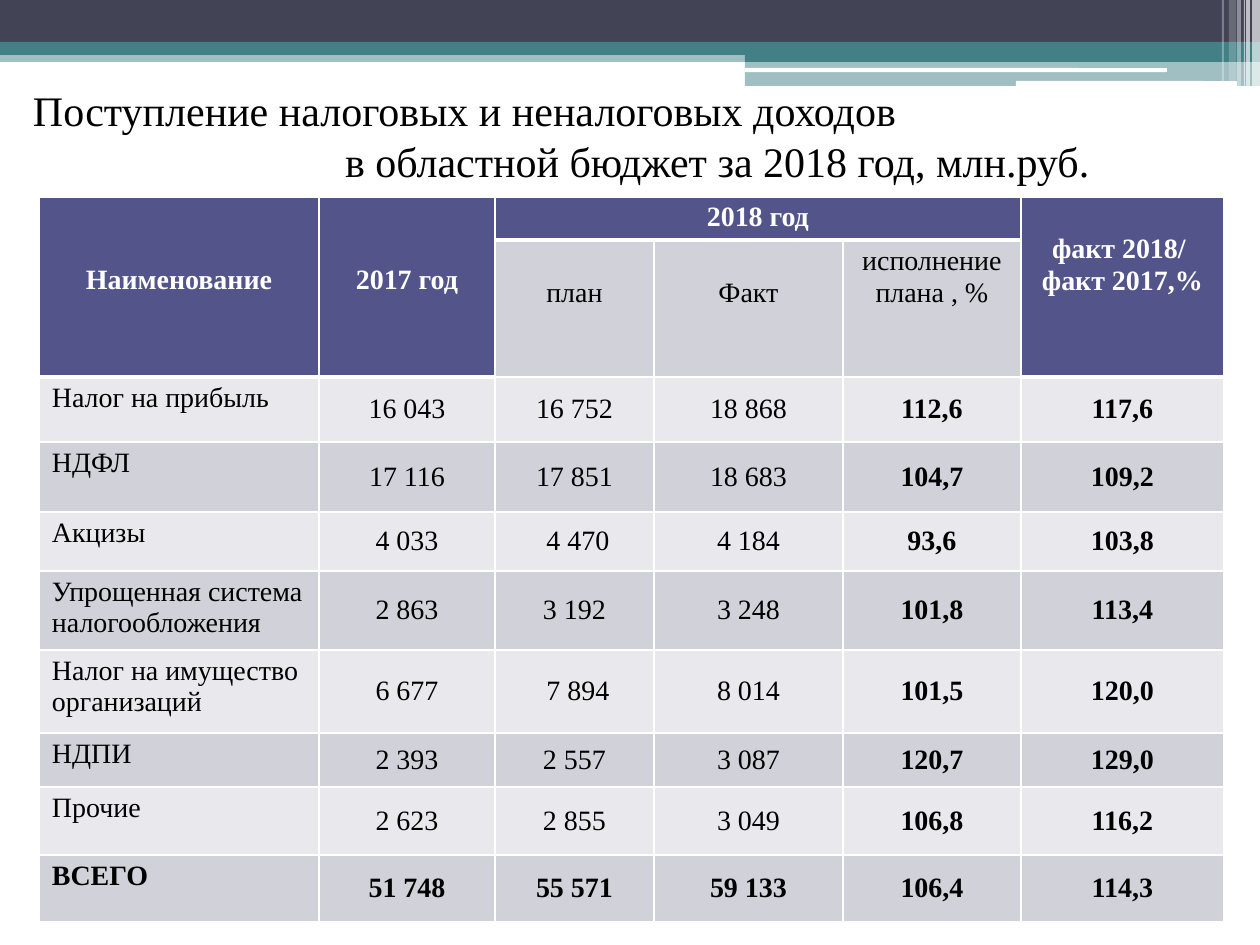
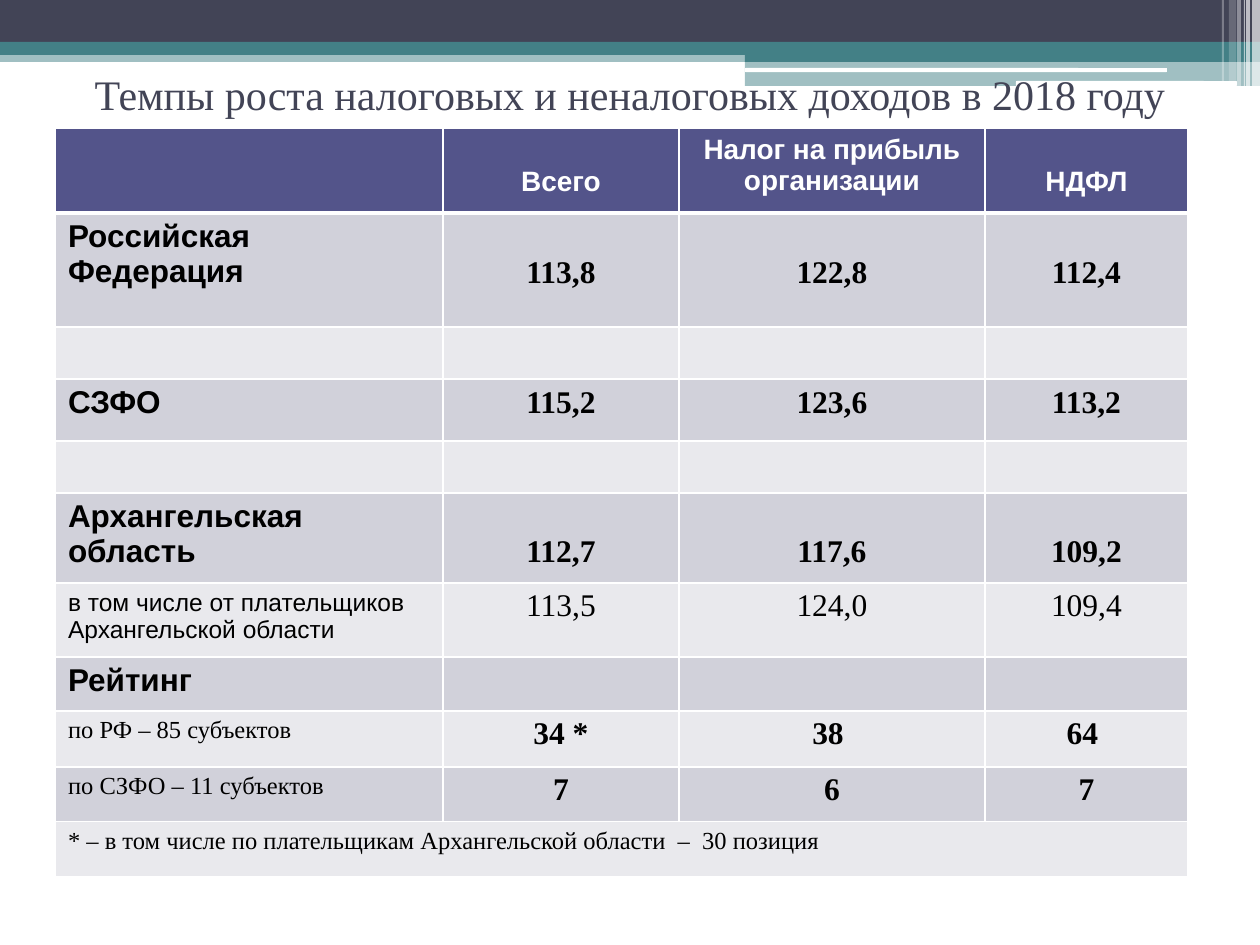
"""Build two slides on regional tax revenue for 2018."""
from dataclasses import dataclass

from lxml import etree
from pptx import Presentation
from pptx import util as u
from pptx.dml import color
from pptx.enum import shapes, text
from pptx.oxml import ns


@dataclass(frozen=True)
class Theme:
    dark: str = "424456"
    teal: str = "438086"
    head: str = "53548A"
    odd: str = "D1D1DA"
    even: str = "E9E9ED"
    white: str = "FFFFFF"
    black: str = "000000"
    serif: str = "Times New Roman"
    sans: str = "Arial"
    title: int = 24
    large: int = 18
    base: int = 16
    small: int = 14


T = Theme()
PX = 914400 / 126
RGB = color.RGBColor.from_string
MID, TOP = text.MSO_ANCHOR.MIDDLE, text.MSO_ANCHOR.TOP
LEFT, CENTER = text.PP_ALIGN.LEFT, text.PP_ALIGN.CENTER


def write(box, words, size=T.base, font=T.serif, ink=T.black, bold=False,
          align=CENTER, anchor=TOP, pads=(13, 6, 13, 6)):
    """Fill a cell or text frame, one paragraph per line of words."""
    frame = getattr(box, "text_frame", box)
    box.vertical_anchor = anchor
    sides = ("margin_left", "margin_top", "margin_right", "margin_bottom")
    for side, pad in zip(sides, pads):
        setattr(box, side, int(pad * PX))
    frame.word_wrap = True
    frame.text = words
    for para in frame.paragraphs:
        para.alignment = align
        for run in para.runs:
            run.font.size, run.font.name, run.font.bold = u.Pt(size), font, bold
            run.font.color.rgb = RGB(ink)


def grid(slide, left, top, cols, rows, heads):
    """Add a banded table with white rules; heads holds its header cells."""
    area = [int(v * PX) for v in (left, top, sum(cols), sum(rows))]
    table = slide.shapes.add_table(len(rows), len(cols), *area).table
    table.first_row = table.horz_banding = False
    for col, wide in zip(table.columns, cols):
        col.width = int(wide * PX)
    for row, tall in zip(table.rows, rows):
        row.height = int(tall * PX)
    for r in range(len(rows)):
        for c in range(len(cols)):
            cell, main = table.cell(r, c), (r, c) in heads
            cell.fill.solid()
            cell.fill.fore_color.rgb = RGB(T.head if main else T.odd if r % 2 else T.even)
            above = (r - 1, c) in heads and not main
            widths = {"L": 1, "R": 1, "T": 3 if above else 1, "B": 3 if main else 1}
            props = cell._tc.get_or_add_tcPr()
            for spot, (side, wide) in enumerate(widths.items()):
                line = etree.Element(ns.qn("a:ln" + side), w=str(u.Pt(wide)))
                fill = etree.SubElement(line, ns.qn("a:solidFill"))
                etree.SubElement(fill, ns.qn("a:srgbClr"), val=T.white)
                props.insert(spot, line)
    return table


deck = Presentation()
deck.slide_width, deck.slide_height = int(1260 * PX), int(945 * PX)
layout = deck.slide_layouts[5]
first, second = [deck.slides.add_slide(layout) for _ in range(2)]

RECT, ROUND = shapes.MSO_SHAPE.RECTANGLE, shapes.MSO_SHAPE.ROUNDED_RECTANGLE
bands = [
    (RECT, 0, 50, 1260, 12, T.teal, 50),
    (RECT, 0, 0, 1260, 43, T.dark, 100),
    (RECT, 0, 42, 1260, 13, T.teal, 100),
    (RECT, 745, 49, 515, 13, T.teal, 100),
    (RECT, 745, 61, 515, 25, T.teal, 50),
    (ROUND, 745, 68, 422, 4, T.white, 100),
    (ROUND, 1016, 81, 221, 5, T.white, 100),
]
stripes = [(1252, 8, 86, 65), (1246, 4, 86, 65), (1244, 1, 86, 60),
           (1237, 4, 86, 40), (1229, 7, 81, 20), (1222, 2, 81, 30)]
bands += [(RECT, x, 0, wide, tall, T.white, alpha) for x, wide, tall, alpha in stripes]
for kind, *area, tint, alpha in bands:
    band = first.shapes.add_shape(kind, *[int(v * PX) for v in area])
    band.shadow.inherit = False
    band.line.fill.background()
    band.fill.solid()
    band.fill.fore_color.rgb = RGB(tint)
    if alpha < 100:
        paint = band.element.spPr.find(".//" + ns.qn("a:srgbClr"))
        etree.SubElement(paint, ns.qn("a:alpha"), val=str(alpha * 1000))
    layout.shapes.element.append(band.element)

titles = [
    (first, (20, 98, 1260, 118), "Поступление налоговых и неналоговых доходов\n"
     "в областной бюджет за 2018 год, млн.руб.", T.black, LEFT, (13, 0, 13, 44)),
    (second, (63, 59, 1134, 69), "Темпы роста налоговых и неналоговых доходов в 2018 году",
     T.dark, CENTER, (13, 6, 13, 6)),
]
for slide, area, words, ink, align, pads in titles:
    name = slide.shapes.title
    name.left, name.top, name.width, name.height = [int(v * PX) for v in area]
    write(name.text_frame, words, size=T.title, ink=ink, align=align, anchor=MID, pads=pads)
    name.text_frame.auto_size = text.MSO_AUTO_SIZE.NONE
shift = first.shapes.title.text_frame.paragraphs[1]._p.get_or_add_pPr()
shift.set("marL", str(int(312 * PX)))
shift.set("indent", "0")

heads = {(0, c) for c in range(6)} | {(1, c) for c in (0, 1, 5)}
taxes = grid(first, 39, 197, [280, 176, 159, 189, 178, 203],
             [43, 137, 65, 70, 59, 79, 83, 54, 68, 67], heads)
for c in (0, 1, 5):
    taxes.cell(0, c).merge(taxes.cell(1, c))
taxes.cell(0, 2).merge(taxes.cell(0, 4))
labels = [
    (0, 0, "Наименование", 68), (0, 1, "2017 год", 68), (0, 2, "2018 год", 5),
    (0, 5, "факт 2018/ \nфакт 2017,%", 37),
    (1, 2, "план", 38), (1, 3, "Факт", 38), (1, 4, "исполнение плана , %", 6),
]
for r, c, words, drop in labels:
    main = (r, c) in heads
    write(taxes.cell(r, c), words, ink=T.white if main else T.black, bold=main,
          pads=(13, drop, 13, 5))
sums = [
    ("Налог на прибыль", "16 043", "16 752", "18 868", "112,6", "117,6"),
    ("НДФЛ", "17 116", "17 851", "18 683", "104,7", "109,2"),
    ("Акцизы", "4 033", " 4 470", "4 184", "93,6", "103,8"),
    ("Упрощенная система налогообложения", "2 863", "3 192", "3 248", "101,8", "113,4"),
    ("Налог на имущество организаций", "6 677", " 7 894", "8 014", "101,5", "120,0"),
    ("НДПИ", "2 393", "2 557", "3 087", "120,7", "129,0"),
    ("Прочие", "2 623", "2 855", "3 049", "106,8", "116,2"),
    ("ВСЕГО", "51 748", "55 571", "59 133", "106,4", "114,3"),
]
for r, (label, *values) in enumerate(sums, 2):
    total = label == "ВСЕГО"
    write(taxes.cell(r, 0), label, bold=total, align=LEFT)
    for c, value in enumerate(values, 1):
        write(taxes.cell(r, c), value, bold=total or c > 3, anchor=MID, pads=(0, 0, 0, 0))

rates = grid(second, 55, 128, [388, 236, 306, 203],
             [85, 114, 52, 62, 52, 90, 74, 54, 56, 55, 55], {(0, c) for c in range(4)})
rates.cell(10, 0).merge(rates.cell(10, 3))
tops = [("Всего", 38), ("Налог на прибыль организации", 6), ("НДФЛ", 38)]
for c, (words, drop) in enumerate(tops, 1):
    write(rates.cell(0, c), words, font=T.sans, ink=T.white, bold=True, pads=(13, drop, 13, 6))
bold = dict(size=T.large, font=T.sans, bold=True)
note = dict(size=T.small)
lines = [
    (1, "Российская Федерация", bold, 42, ("113,8", "122,8", "112,4")),
    (3, "СЗФО", bold, 6, ("115,2", "123,6", "113,2")),
    (5, "Архангельская область", bold, 42, ("112,7", "117,6", "109,2")),
    (6, "в том числе от плательщиков Архангельской области",
     dict(size=T.small, font=T.sans), 6, ("113,5", "124,0", "109,4")),
    (7, "Рейтинг", bold, 6, ()),
    (8, "по РФ – 85 субъектов", note, 6, ("34 *", "38 ", "64 ")),
    (9, "по СЗФО – 11 субъектов", note, 6, ("7", "6", "7")),
    (10, "* – в том числе по плательщикам Архангельской области  –  30 позиция", note, 6, ()),
]
for r, label, style, drop, values in lines:
    write(rates.cell(r, 0), label, align=LEFT, **style)
    for c, value in enumerate(values, 1):
        write(rates.cell(r, c), value, size=T.large, bold=r != 6, pads=(13, drop, 13, 6))

deck.save("out.pptx")
